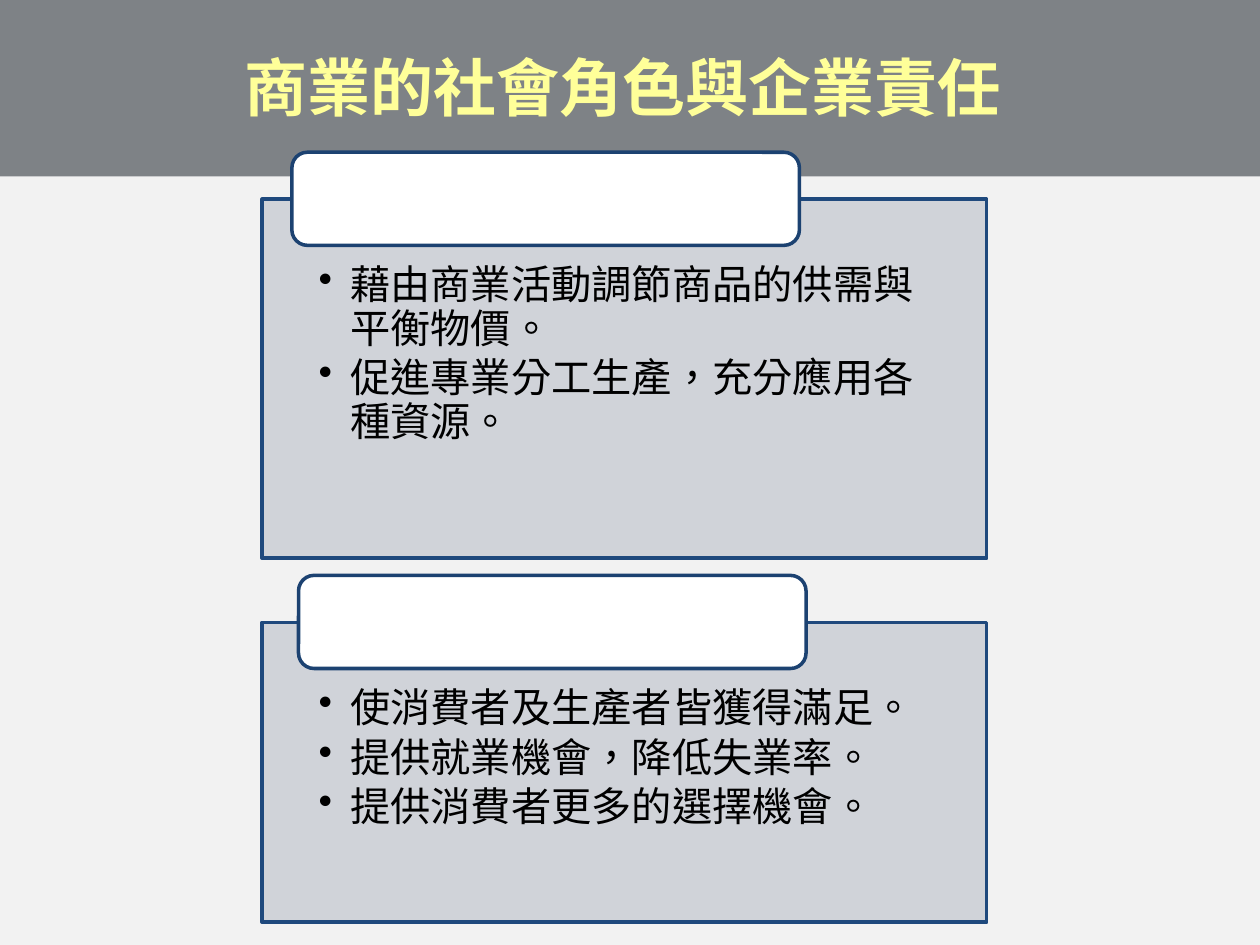
from lxml.etree import SubElement
from pptx import Presentation
from pptx.dml.color import RGBColor
from pptx.enum.shapes import MSO_SHAPE
from pptx.enum.text import MSO_ANCHOR, PP_ALIGN
from pptx.oxml.ns import qn
from pptx.util import Pt

FONT = "Noto Sans CJK SC"
COLORS = {
    "background": "F2F2F2",
    "banner": "0C141C",
    "title": "FFFF99",
    "panel": "CDD0D7",
    "panel_line": "1F497D",
    "label": "FFFFFF",
    "label_line": "1C4271",
    "body": "000000",
}


def add_block(kind, left, top, width, height, color, opacity=100, line=None):
    block = slide.shapes.add_shape(kind, Pt(left), Pt(top), Pt(width), Pt(height))
    block.shadow.inherit = False
    block.fill.solid()
    block.fill.fore_color.rgb = RGBColor.from_string(COLORS[color])
    if opacity < 100:
        fill_color = block.fill._xPr.find(qn("a:solidFill"))[0]
        SubElement(fill_color, qn("a:alpha"), val=str(opacity * 1000))
    if line:
        block.line.color.rgb = RGBColor.from_string(COLORS[line])
        block.line.width = Pt(2)
    else:
        block.line.fill.background()
    return block


def add_run(paragraph, text, size, color, bold=False):
    """Add a Traditional Chinese run with the same Latin and East Asian font."""
    run = paragraph.add_run()
    run.text = text
    run.font.size = Pt(size)
    run.font.bold = bold
    run.font.color.rgb = RGBColor.from_string(COLORS[color])
    run.font.name = FONT
    properties = run._r.get_or_add_rPr()
    properties.set("lang", "zh-TW")
    SubElement(properties, qn("a:ea"), typeface=FONT)


prs = Presentation()
prs.slide_width, prs.slide_height = Pt(720), Pt(540)
slide = prs.slides.add_slide(prs.slide_layouts[6])
slide.background.fill.solid()
slide.background.fill.fore_color.rgb = RGBColor.from_string(COLORS["background"])

add_block(MSO_SHAPE.RECTANGLE, 0, 0, 720, 100.8, "banner", opacity=50)

title = slide.shapes.add_textbox(Pt(36.7), Pt(12.2), Pt(638), Pt(62.6)).text_frame
title.word_wrap = True
title.vertical_anchor = MSO_ANCHOR.BOTTOM
title.margin_left = title.margin_right = Pt(6)
title.margin_top = title.margin_bottom = Pt(3)
heading = title.paragraphs[0]
heading.alignment = PP_ALIGN.CENTER
heading.line_spacing = 0.9
add_run(heading, "商業的社會角色與企業責任", 36, "title", bold=True)

# Panel top, panel height, label left, bullet points
sections = [
    (113.8, 205.2, 166.8, [
        "藉由商業活動調節商品的供需與平衡物價。",
        "促進專業分工生產，充分應用各種資源。",
    ]),
    (355.6, 171.4, 170.6, [
        "使消費者及生產者皆獲得滿足。",
        "提供就業機會，降低失業率。",
        "提供消費者更多的選擇機會。",
    ]),
]
for panel_top, panel_height, label_left, points in sections:
    panel = add_block(MSO_SHAPE.RECTANGLE, 149.8, panel_top, 414, panel_height,
                      "panel", opacity=90, line="panel_line")
    body = panel.text_frame
    body.word_wrap = True
    body.vertical_anchor = MSO_ANCHOR.TOP
    body.margin_left = body.margin_right = Pt(32.2)
    body.margin_top, body.margin_bottom = Pt(37.5), Pt(13)
    for index, point in enumerate(points):
        paragraph = body.paragraphs[0] if index == 0 else body.add_paragraph()
        paragraph.alignment = PP_ALIGN.LEFT
        paragraph.line_spacing = 0.9
        paragraph.space_after = Pt(3.5)
        layout = paragraph._p.get_or_add_pPr()
        layout.set("marL", str(Pt(18)))
        layout.set("indent", str(-Pt(18)))
        SubElement(layout, qn("a:buChar"), char="•")
        add_run(paragraph, point, 23, "body")

    add_block(MSO_SHAPE.ROUNDED_RECTANGLE, label_left, panel_top - 26.8, 290, 53.2,
              "label", line="label_line")

prs.save("out.pptx")
